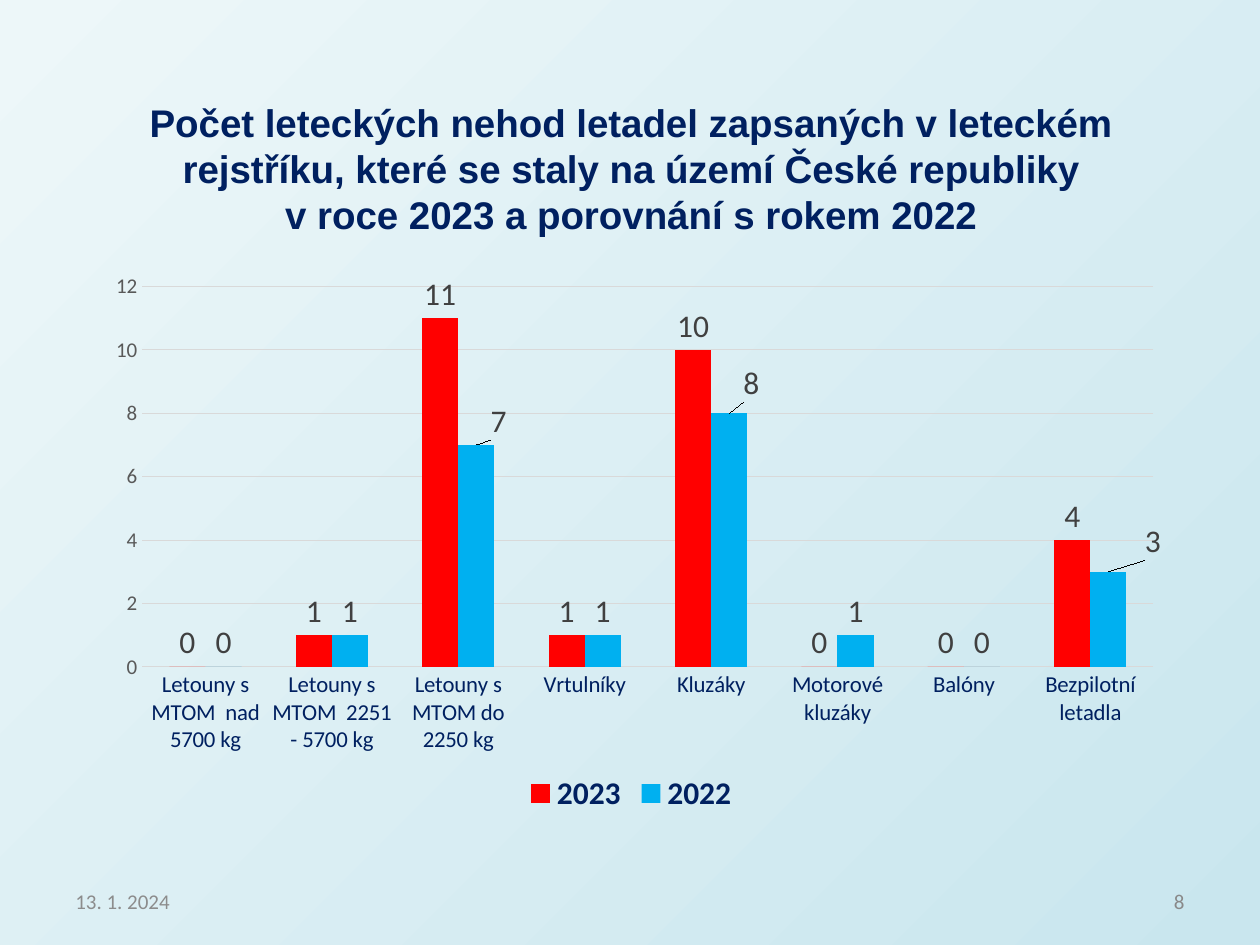
from lxml.etree import SubElement
from pptx import Presentation
from pptx.chart.data import CategoryChartData
from pptx.dml.color import RGBColor
from pptx.enum.chart import XL_CHART_TYPE, XL_LABEL_POSITION, XL_LEGEND_POSITION, XL_TICK_MARK
from pptx.enum.text import MSO_ANCHOR, PP_ALIGN
from pptx.oxml.ns import qn
from pptx.util import Inches, Pt

TITLE = (
    "Počet leteckých nehod letadel zapsaných v leteckém rejstříku, "
    "které se staly na území České republiky\vv roce 2023 a porovnání s rokem 2022"
)
FOOTERS = [
    ("13. 1. 2024", 0.5, PP_ALIGN.LEFT, "8C8C8C"),
    ("8", 7.17, PP_ALIGN.RIGHT, "898989"),
]
CATEGORIES = [
    "Letouny s MTOM  nad 5700 kg", "Letouny s MTOM  2251 - 5700 kg",
    "Letouny s MTOM do 2250 kg", "Vrtulníky", "Kluzáky",
    "Motorové kluzáky", "Balóny", "Bezpilotní letadla",
]
SERIES = [
    ("2023", [0, 1, 11, 1, 10, 0, 0, 4], "FF0000", {}),
    ("2022", [0, 1, 7, 1, 8, 1, 0, 3], "00B0F0",
     {2: (0.02, 0), 4: (0.02, -0.01), 7: (0.04, -0.01)}),
]
BACKGROUND = ["EDF7F9", "C9E6EE"]
PLOT_AREA = {"x": 0.06, "y": 0.16, "w": 0.91, "h": 0.6}
NAVY, GRID = "002060", "D9D9D9"


def color(value):
    """Turn a hex string into a colour."""
    return RGBColor.from_string(value)


def set_font(font, size, value, name="Calibri", bold=False):
    """Apply one text format."""
    formats = {"size": Pt(size), "name": name, "bold": bold}
    for attribute, setting in formats.items():
        setattr(font, attribute, setting)
    font.color.rgb = color(value)


def set_line(line, value, width):
    """Apply a solid line."""
    line.color.rgb = color(value)
    line.width = Pt(width)


def place(shape, left, top, width, height):
    """Position a shape in inches."""
    sides = {"left": left, "top": top, "width": width, "height": height}
    for attribute, length in sides.items():
        setattr(shape, attribute, Inches(length))


def write(shape, text, alignment, *font):
    """Fill a shape with one formatted, vertically centred paragraph."""
    frame = shape.text_frame
    frame.word_wrap = True
    frame.vertical_anchor = MSO_ANCHOR.MIDDLE
    frame.text = text
    paragraph = frame.paragraphs[0]
    paragraph.alignment = alignment
    for run in paragraph.runs:
        set_font(run.font, *font)


def add_manual_layout(layout, values):
    """Write a manual chart layout."""
    manual = SubElement(layout, qn("c:manualLayout"))
    for tag, value in values.items():
        SubElement(manual, qn(f"c:{tag}")).set("val", str(value))


def format_series(series, fill, offsets):
    """Colour the columns and place their value labels."""
    series.format.fill.solid()
    series.format.fill.fore_color.rgb = color(fill)
    series.invert_if_negative = False
    labels = series.data_labels
    labels.show_value = True
    labels.position = XL_LABEL_POSITION.OUTSIDE_END
    set_font(labels.font, 18, "404040")
    for index, (x, y) in offsets.items():
        label = series.points[index].data_label
        label.position = XL_LABEL_POSITION.OUTSIDE_END
        set_font(label.font, 18, "404040")
        element = series._element.xpath(f'c:dLbls/c:dLbl[c:idx/@val="{index}"]')[0]
        layout = SubElement(element, qn("c:layout"))
        element.insert(1, layout)
        add_manual_layout(layout, {"x": x, "y": y})


def add_accident_chart(slide):
    """Add the clustered column chart."""
    data = CategoryChartData()
    data.categories = CATEGORIES
    for name, values, _, _ in SERIES:
        data.add_series(name, values)
    chart = slide.shapes.add_chart(
        XL_CHART_TYPE.COLUMN_CLUSTERED,
        Inches(0.6), Inches(1.47), Inches(8.82), Inches(5.03), data,
    ).chart
    set_font(chart.font, 10, "000000")
    chart.has_title = False
    plot = chart.plots[0]
    plot.gap_width, plot.overlap, plot.vary_by_categories = 150, 0, False
    for series, (_, _, fill, offsets) in zip(plot.series, SERIES):
        format_series(series, fill, offsets)

    category_axis, value_axis = chart.category_axis, chart.value_axis
    for axis, size, value in [(category_axis, 13, NAVY), (value_axis, 12, "595959")]:
        axis.major_tick_mark = axis.minor_tick_mark = XL_TICK_MARK.NONE
        set_font(axis.tick_labels.font, size, value)
    set_line(category_axis.format.line, GRID, 0.75)
    value_axis.format.line.fill.background()
    value_axis.minimum_scale, value_axis.maximum_scale, value_axis.major_unit = 0, 12, 2
    set_line(value_axis.major_gridlines.format.line, GRID, 0.5)

    chart.has_legend = True
    chart.legend.position = XL_LEGEND_POSITION.BOTTOM
    chart.legend.include_in_layout = True
    set_font(chart.legend.font, 18, NAVY, bold=True)

    plot_area = chart._chartSpace.chart.plotArea
    for layout in plot_area.findall(qn("c:layout")):
        plot_area.remove(layout)
    layout = SubElement(plot_area, qn("c:layout"))
    plot_area.insert(0, layout)
    modes = {"layoutTarget": "inner", "xMode": "edge", "yMode": "edge"}
    add_manual_layout(layout, modes | PLOT_AREA)


def main():
    """Build and save the slide."""
    presentation = Presentation()
    presentation.slide_width, presentation.slide_height = Inches(10), Inches(7.5)
    slide = presentation.slides.add_slide(presentation.slide_layouts[5])
    fill = slide.background.fill
    fill.gradient()
    fill.gradient_angle = 315
    for stop, value in zip(fill.gradient_stops, BACKGROUND):
        stop.color.rgb = color(value)
    for text, left, alignment, value in FOOTERS:
        box = slide.shapes.add_textbox(0, 0, 0, 0)
        place(box, left, 6.95, 2.33, 0.4)
        write(box, text, alignment, 12, value)
    title = slide.shapes.title
    place(title, 0.51, 0.71, 9, 1.25)
    write(title, TITLE, PP_ALIGN.CENTER, 22, NAVY, "Arial", True)
    add_accident_chart(slide)
    presentation.save("out.pptx")


if __name__ == "__main__":
    main()
